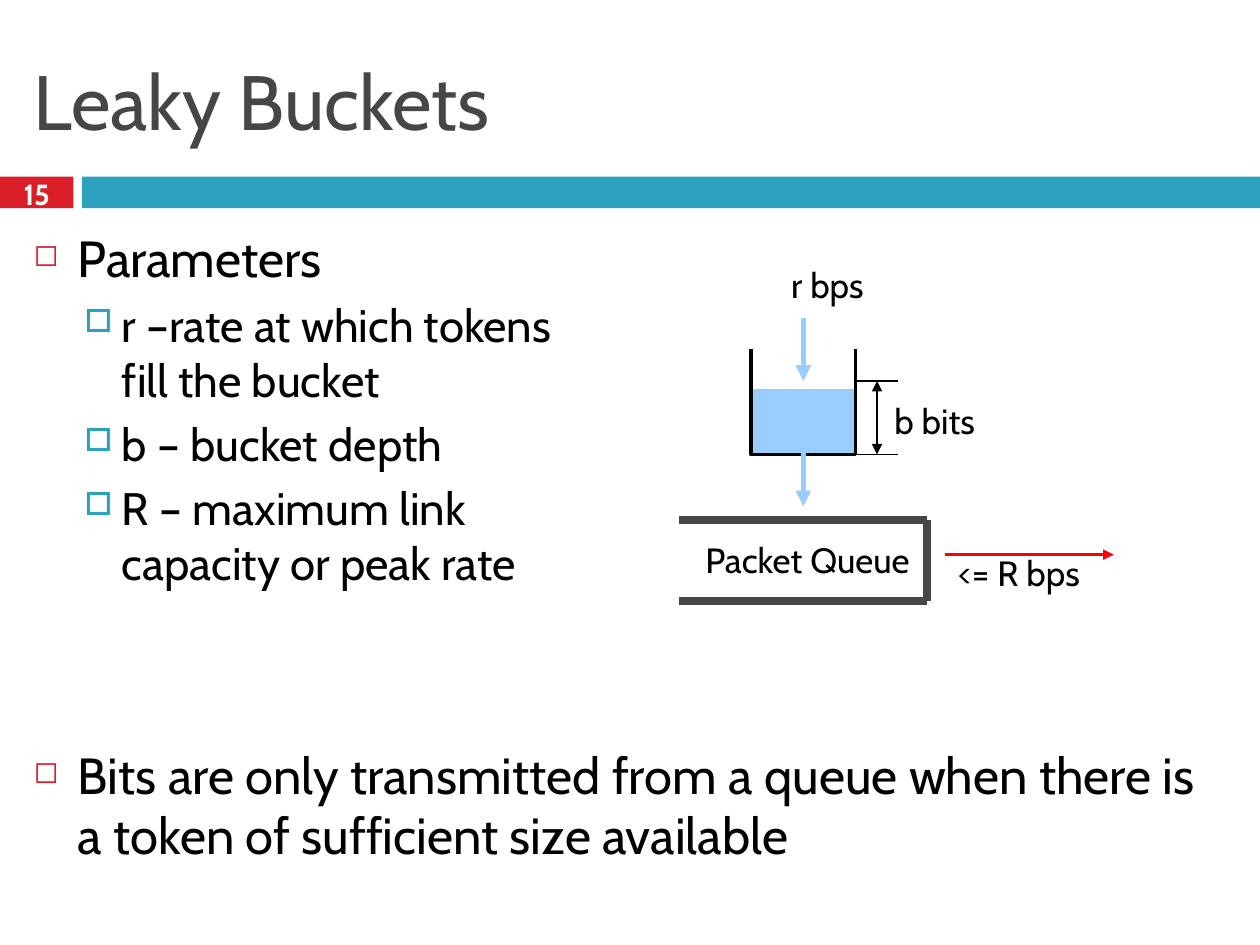
from dataclasses import dataclass

from lxml import etree
from pptx import Presentation
from pptx import util as u
from pptx.dml import color
from pptx.enum import shapes, text
from pptx.oxml import ns


@dataclass(frozen=True)
class Theme:
    """Colours, font and type sizes of the slide."""
    font: str = "Cabin"
    red: str = "DA1F28"
    teal: str = "2DA2BF"
    grey: str = "464646"
    black: str = "000000"
    white: str = "FFFFFF"
    water: str = "99CCFF"
    limit: str = "FF0000"
    title: float = 44
    number: float = 16.6
    label: float = 20
    levels: tuple = (29, 26)


THEME = Theme()
BULLETS = (
    {"char": "◻", "colour": THEME.red, "percent": 60, "margin": 0.89, "hang": 0.89, "before": 7},
    {"char": "□", "colour": THEME.teal, "percent": 70, "margin": 1.78, "hang": 0.76, "before": 5.5},
)


def rgb(value):
    """Return a colour object for a hex value."""
    return color.RGBColor.from_string(value)


def apply_format(target, values):
    """Set every attribute in a dict of format values."""
    for name, value in values.items():
        setattr(target, name, value)


def add_child(parent, tag, **attributes):
    """Append a DrawingML element with the given attributes."""
    return etree.SubElement(parent, ns.qn(tag), attributes)


def add_bar(slide, box, fill):
    """Add a plain filled rectangle."""
    shape = slide.shapes.add_shape(shapes.MSO_SHAPE.RECTANGLE, *map(u.Cm, box))
    shape.shadow.inherit = False
    shape.fill.solid()
    shape.fill.fore_color.rgb = rgb(fill)
    shape.line.fill.background()
    return shape


def add_line(slide, start, end, colour, width, heads=()):
    """Add a straight line with triangles at the named ends."""
    line = slide.shapes.add_connector(
        shapes.MSO_CONNECTOR.STRAIGHT, *map(u.Cm, (*start, *end)))
    line.line.color.rgb = rgb(colour)
    line.line.width = u.Pt(width)
    outline = line.line._get_or_add_ln()
    for head in heads:
        add_child(outline, f"a:{head}", type="triangle")
    add_child(line._element.spPr, "a:effectLst")


def style_run(run, size, colour, bold=False):
    """Set the font of a run."""
    apply_format(run.font, {"name": THEME.font, "size": u.Pt(size), "bold": bold})
    run.font.color.rgb = rgb(colour)


def add_text(slide, box, words, size, colour=THEME.black, bold=False, wrap=False,
             anchor=text.MSO_ANCHOR.TOP, align=text.PP_ALIGN.LEFT):
    """Add a text box with one paragraph."""
    frame = slide.shapes.add_textbox(*map(u.Cm, box)).text_frame
    apply_format(frame, {"word_wrap": wrap, "vertical_anchor": anchor})
    paragraph = frame.paragraphs[0]
    paragraph.alignment = align
    run = paragraph.add_run()
    run.text = words
    style_run(run, size, colour, bold)


def add_bullets(slide, box, items):
    """Add a bulleted list from pairs of level and words."""
    frame = slide.shapes.add_textbox(*map(u.Cm, box)).text_frame
    frame.word_wrap = True
    for index, (level, words) in enumerate(items):
        paragraph = frame.add_paragraph() if index else frame.paragraphs[0]
        bullet = BULLETS[level]
        apply_format(paragraph, {"level": level, "space_before": u.Pt(bullet["before"])})
        properties = paragraph._p.get_or_add_pPr()
        properties.set("marL", str(u.Cm(bullet["margin"])))
        properties.set("indent", str(-u.Cm(bullet["hang"])))
        add_child(add_child(properties, "a:buClr"), "a:srgbClr", val=bullet["colour"])
        add_child(properties, "a:buSzPct", val=str(bullet["percent"] * 1000))
        add_child(properties, "a:buChar", char=bullet["char"])
        run = paragraph.add_run()
        run.text = words
        style_run(run, THEME.levels[level], THEME.black)


def add_header(slide, box):
    """Add the title, the coloured band and the slide number."""
    left, top, width, height = box
    middle = text.MSO_ANCHOR.MIDDLE
    band, band_height, number_width, gap = top + 2.92, 0.64, 1.48, 0.17
    band_left = left + number_width + gap
    add_bar(slide, (left, band, number_width, band_height), THEME.red)
    add_bar(slide, (band_left, band, width - number_width - gap, band_height), THEME.teal)
    add_text(slide, (left + 0.43, top, width - 0.86, height), "Leaky Buckets",
             THEME.title, THEME.grey, wrap=True, anchor=middle)
    add_text(slide, (left, band - 0.08, number_width, 0.84), "15", THEME.number,
             THEME.white, bold=True, wrap=True, anchor=middle, align=text.PP_ALIGN.CENTER)


def add_bucket(slide, box):
    """Add the bucket with its token flows and depth mark."""
    left, top, width, height = box
    right, bottom, centre = left + width, top + height, left + width / 2
    level, flow = top + 0.64, 1.27
    water = add_bar(slide, (left, top + 0.84, width, height - 0.84), THEME.water)
    water.line.color.rgb = rgb(THEME.water)
    water.line.width = u.Pt(2)
    builder = slide.shapes.build_freeform(u.Cm(left), u.Cm(top))
    corners = ((left, bottom), (right, bottom), (right, top))
    builder.add_line_segments([(u.Cm(x), u.Cm(y)) for x, y in corners], close=False)
    wall = builder.convert_to_shape()
    wall.shadow.inherit = False
    wall.fill.background()
    wall.line.color.rgb = rgb(THEME.black)
    wall.line.width = u.Pt(2)
    for start in (level - flow, bottom - 0.22):
        add_line(slide, (centre, start), (centre, start + flow), THEME.water, 3, ("tailEnd",))
    mark = right + 0.43
    add_line(slide, (mark, level), (mark, bottom), THEME.black, 1, ("headEnd", "tailEnd"))
    for y in (level, bottom):
        add_line(slide, (right, y), (right + 0.86, y), THEME.black, 1)
    add_text(slide, (left + 0.56, top - 1.86, 2.06, 1.09), "r bps", THEME.label)
    add_text(slide, (right + 0.53, top + 0.88, 2.21, 1.09), "b bits", THEME.label)


def add_queue(slide, box):
    """Add the packet queue and its outgoing link."""
    left, top, width, height = box
    right, bottom = left + width, top + height
    link = top + 0.69
    add_line(slide, (right + 0.36, link), (right + 3.76, link), THEME.limit, 2, ("tailEnd",))
    add_text(slide, (right + 0.21, top + 0.51, 3.35, 1.09), " <= R bps", THEME.label)
    for start, end in (((left, top), (right, top)), ((left, bottom), (right, bottom)),
                       ((right, top), (right, bottom))):
        add_line(slide, start, end, THEME.grey, 4.5)
    add_text(slide, (left - 0.13, top + 0.25, width + 0.03, 1.12), "Packet Queue",
             THEME.label, align=text.PP_ALIGN.RIGHT)


def main():
    """Build the slide and save it."""
    presentation = Presentation()
    apply_format(presentation, {"slide_width": u.Cm(25.4), "slide_height": u.Cm(19.05)})
    slide = presentation.slides.add_slide(presentation.slide_layouts[6])
    add_header(slide, (0, 0.64, 25.4, 2.74))
    add_bullets(slide, (0.43, 4.45, 11.07, 8.31), (
        (0, "Parameters"),
        (1, "r –rate at which tokens fill the bucket"),
        (1, "b – bucket depth"),
        (1, "R – maximum link capacity or peak rate"),
    ))
    add_bucket(slide, (15.14, 7.04, 2.11, 2.12))
    add_bullets(slide, (0.43, 14.86, 24.56, 3.18), (
        (0, "Bits are only transmitted from a queue when there is a token of"
            " sufficient size available"),
    ))
    add_queue(slide, (13.69, 10.49, 5, 1.63))
    presentation.save("out.pptx")


if __name__ == "__main__":
    main()
